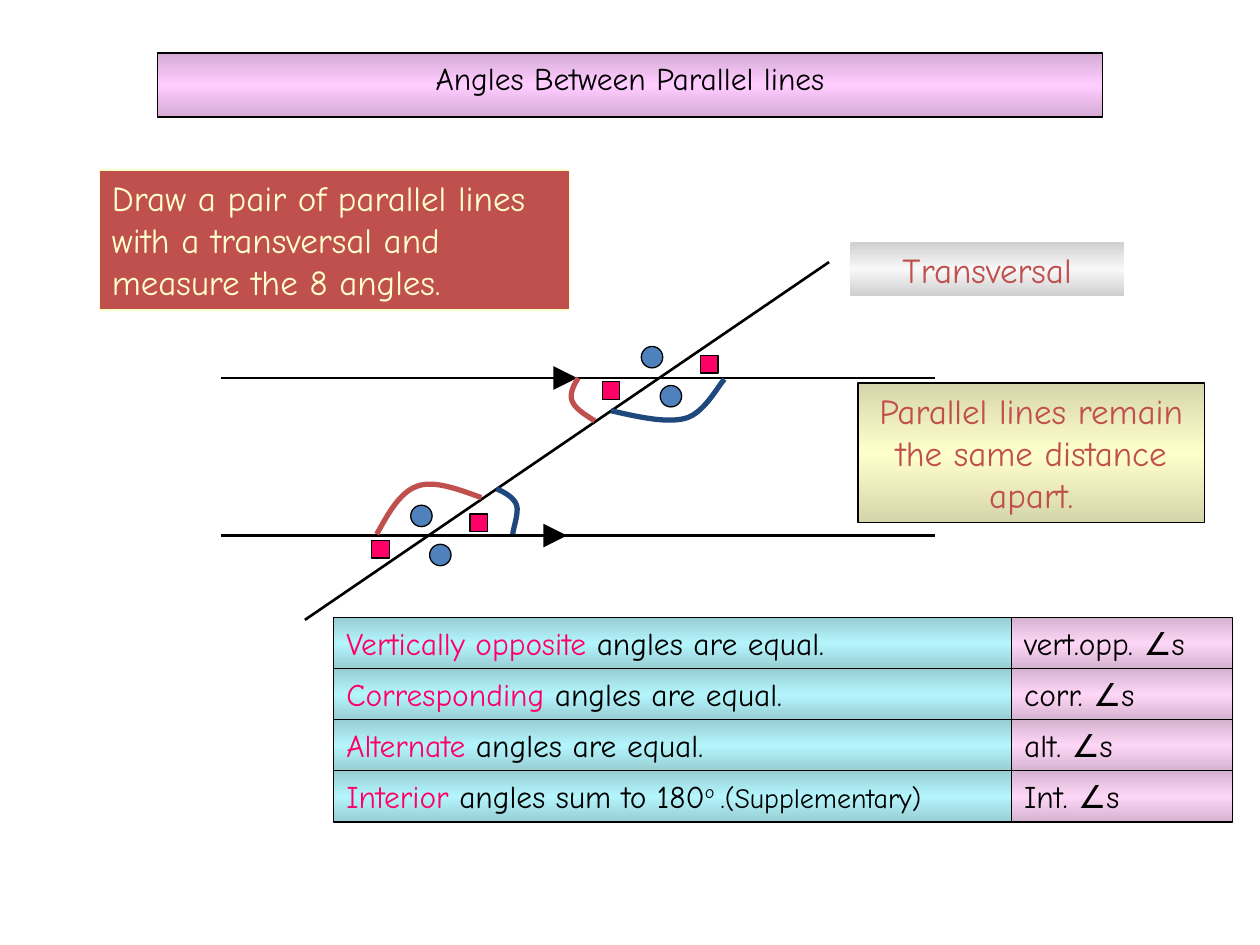
import copy

import pptx
import pptx.util
from pptx.dml.color import RGBColor
from pptx.enum.shapes import MSO_CONNECTOR, MSO_SHAPE
from pptx.enum.text import MSO_ANCHOR, MSO_AUTO_SIZE, PP_ALIGN
from pptx.oxml.ns import qn
from pptx.oxml.xmlchemy import OxmlElement

Inches = pptx.util.Inches
FONT = "Comic Neue"
COLORS = {
    "black": "000000", "red": "C0504D", "pink": "FF0066", "cream": "FFFFCC",
    "blue": "4F81BD", "navy": "1F497D",
}
# Edge and middle colour of each vertical gradient
GRADIENTS = {
    "lilac": ("D5ABD5", "FFCCFF"), "sand": ("D5D5AB", "FFFFCC"),
    "silver": ("CFCFCF", "F8F8F8"), "aqua": ("97CDD3", "B4F5FC"),
    "rose": ("D4B3CF", "FED6F7"),
}


def rgb(name):
    return RGBColor.from_string(COLORS[name])


def set_fill(sp, name):
    """Fill with a plain colour or a three-stop gradient."""
    if name in COLORS:
        sp.fill.solid()
        sp.fill.fore_color.rgb = rgb(name)
        return
    edge, middle = GRADIENTS[name]
    sp.fill.gradient()
    sp.fill.gradient_angle = 270
    stops = sp._element.spPr.find(qn("a:gradFill")).find(qn("a:gsLst"))
    stops.append(copy.deepcopy(stops[0]))
    for stop, pos, color in zip(sp.fill.gradient_stops, (0, 0.5, 1), (edge, middle, edge)):
        stop.position = pos
        stop.color.rgb = RGBColor.from_string(color)


def set_line(sp, color, width):
    if color is None:
        sp.line.fill.background()
    else:
        sp.line.color.rgb = rgb(color)
        sp.line.width = pptx.util.Pt(width)


def write(sp, runs, align=PP_ALIGN.LEFT):
    """Fill a box with runs of (text, size, colour[, baseline])."""
    tf = sp.text_frame
    tf.word_wrap = True
    tf.auto_size = MSO_AUTO_SIZE.NONE
    tf.vertical_anchor = MSO_ANCHOR.TOP
    p = tf.paragraphs[0]
    p.alignment = align
    for text, size, color, *baseline in runs:
        r = p.add_run()
        r.text = text
        r.font.name = FONT
        r.font.size = pptx.util.Pt(size)
        r.font.color.rgb = rgb(color)
        if baseline:
            r.font._element.set("baseline", str(baseline[0] * 1000))


def add_box(s, box, fill, line="black", kind=MSO_SHAPE.RECTANGLE):
    sp = s.shapes.add_shape(kind, *map(Inches, box))
    sp.shadow.inherit = False
    set_fill(sp, fill)
    set_line(sp, line, 0.75)
    return sp


def add_line(s, x1, y1, x2, y2, width=1.5, arrow=False):
    line = s.shapes.add_connector(MSO_CONNECTOR.STRAIGHT, *map(Inches, (x1, y1, x2, y2)))
    set_line(line, "black", width)
    line._element.spPr.append(OxmlElement("a:effectLst"))
    if arrow:
        tail = OxmlElement("a:tailEnd")
        tail.set("type", "triangle")
        line.line._get_or_add_ln().append(tail)


def add_arc(s, left, top, color, points):
    """Draw a curve through Bezier points: a start, then groups of three."""
    xy = [(Inches(left + x), Inches(top + y)) for x, y in points]
    builder = s.shapes.build_freeform(*xy[0])
    builder.add_line_segments(xy[1:], close=False)
    sp = builder.convert_to_shape()
    sp.shadow.inherit = False
    sp.fill.background()
    set_line(sp, color, 3)
    outline = next(sp._element.iter(qn("a:path")))
    segments = outline.findall(qn("a:lnTo"))
    for i in range(0, len(segments), 3):
        curve = OxmlElement("a:cubicBezTo")
        for segment in segments[i:i + 3]:
            curve.append(segment[0])
            outline.remove(segment)
        outline.append(curve)


def add_title(s, box):
    title = s.shapes.title
    title.left, title.top, title.width, title.height = map(Inches, box)
    set_fill(title, "lilac")
    set_line(title, "black", 0.75)
    write(title, [("Angles Between Parallel lines", 18, "black")], PP_ALIGN.CENTER)


def add_marks(s, x, y):
    """Mark the four angles around a crossing: equal angles share a shape."""
    for dx, dy in ((-0.15, -0.25), (0, 0.06)):
        add_box(s, (x + dx, y + dy, 0.17, 0.17), "blue", kind=MSO_SHAPE.OVAL)
    for dx, dy in ((0.32, -0.18), (-0.46, 0.03)):
        add_box(s, (x + dx, y + dy, 0.14, 0.14), "pink")


def add_diagram(s, box):
    left, top, width, height = box
    first, second = top + 0.92, top + 2.17
    for y, tip in ((first, 2.83), (second, 2.75)):
        add_line(s, left, y, left + width, y)
        add_line(s, left + tip - 0.16, y, left + tip, y, 4.5, arrow=True)
    add_line(s, left + 0.67, top + height, left + 4.83, top)
    add_marks(s, left + 3.49, first)
    add_marks(s, left + 1.66, second + 0.01)
    arcs = [
        ("navy", first, [(3.1, 0.26), (3.32, 0.31), (3.54, 0.36), (3.69, 0.32),
                         (3.84, 0.28), (3.95, 0.06), (4, 0.01)]),
        ("navy", second, [(2.19, -0.37), (2.26, -0.34), (2.33, -0.3), (2.35, -0.24),
                          (2.37, -0.18), (2.32, -0.05), (2.32, -0.01)]),
        ("red", second, [(1.24, -0.01), (1.33, -0.17), (1.42, -0.34), (1.56, -0.39),
                         (1.69, -0.44), (1.88, -0.37), (2.07, -0.3)]),
        ("red", first, [(2.84, 0), (2.8, 0.06), (2.77, 0.13), (2.79, 0.18),
                        (2.81, 0.24), (2.89, 0.29), (2.97, 0.34)]),
    ]
    for color, y, points in arcs:
        add_arc(s, left, y, color, points)


def add_note(s, box, text, fill, line, color, align):
    write(add_box(s, box, fill, line), [(text, 20, color)], align)


def add_rules(s, box):
    """Stack the angle rules, each with its abbreviation on the right."""
    left, top, width, height = box
    equal = ("angles are equal.", 18, "black")
    rules = [
        ("Vertically opposite ", [equal], "vert.opp. ∠s"),
        ("Corresponding ", [equal], "corr. ∠s"),
        ("Alternate ", [equal], "alt. ∠s"),
        ("Interior ", [("angles sum to 180", 18, "black"), ("o ", 18, "black", 30),
                       (".(Supplementary)", 16, "black")], "Int. ∠s"),
    ]
    short_width = 1.75
    pitch = height / len(rules)
    for i, (name, rest, short) in enumerate(rules):
        y = top + i * pitch
        write(add_box(s, (left, y, 5.4, 0.41), "aqua"), [(name, 18, "pink")] + rest)
        write(add_box(s, (left + width - short_width, y, short_width, 0.41), "rose"),
              [(short, 18, "black")])


def main():
    prs = pptx.Presentation()
    prs.slide_width, prs.slide_height = Inches(10), Inches(7.5)
    s = prs.slides.add_slide(prs.slide_layouts[5])
    add_title(s, (1.25, 0.42, 7.5, 0.51))
    add_diagram(s, (1.75, 2.08, 5.67, 2.84))
    add_note(s, (6.81, 3.04, 2.75, 1.11), "Parallel lines remain the same distance apart.",
             "sand", "black", "red", PP_ALIGN.CENTER)
    add_note(s, (6.75, 1.92, 2.17, 0.43), "Transversal", "silver", None, "red", PP_ALIGN.CENTER)
    add_note(s, (0.79, 1.35, 3.73, 1.11),
             "Draw a pair of parallel lines with a transversal and measure the 8 angles.",
             "red", "cream", "cream", PP_ALIGN.LEFT)
    add_rules(s, (2.65, 4.9, 7.13, 1.62))
    prs.save("out.pptx")


if __name__ == "__main__":
    main()
